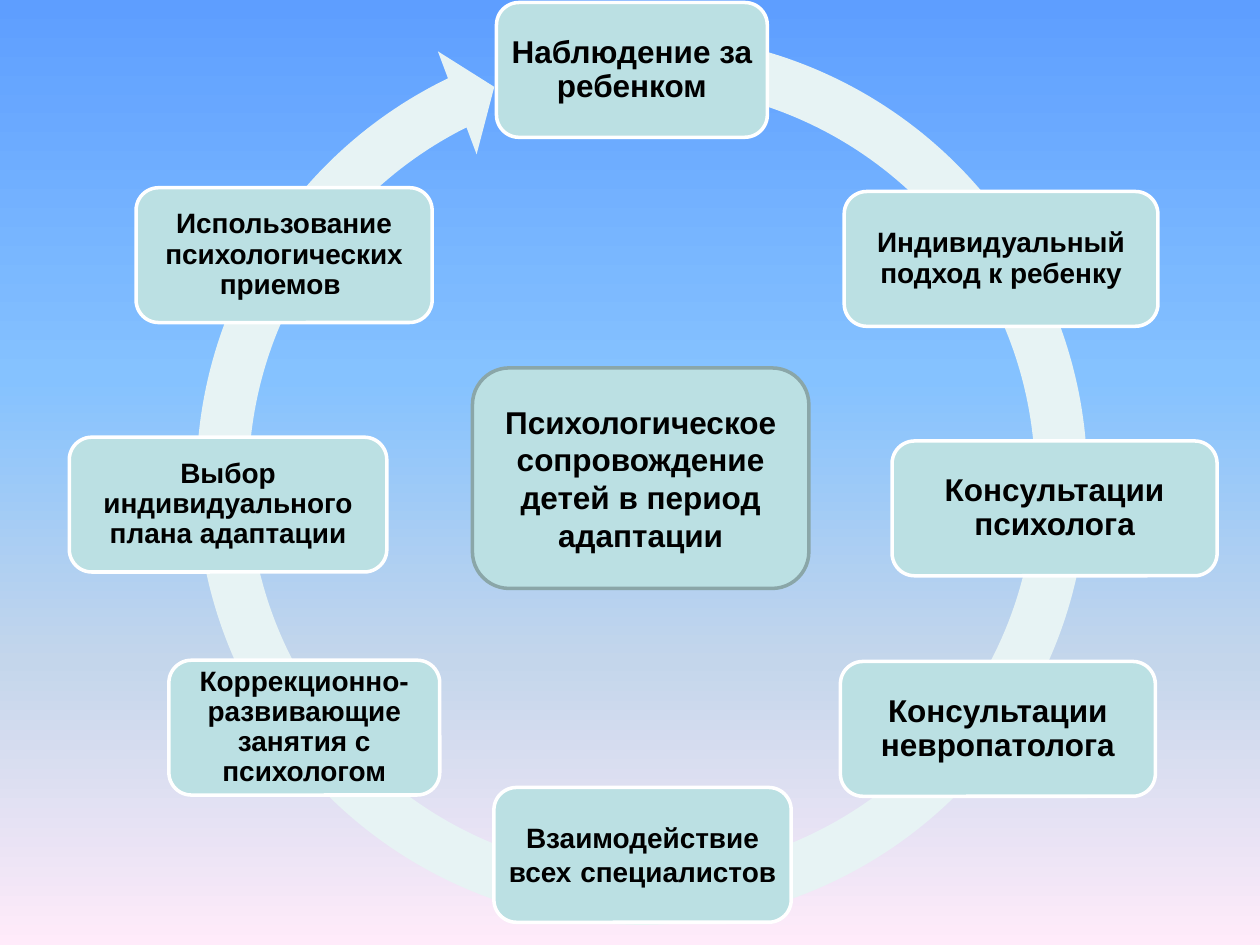
"""Build a slide with a cycle of child adaptation support steps."""
from dataclasses import dataclass

from lxml import etree
from pptx import Presentation
from pptx import util as u
from pptx.dml.color import RGBColor
from pptx.enum import shapes, text
from pptx.oxml.ns import qn
from pptx.slide import Slide


@dataclass(frozen=True)
class Theme:
    """Colours, type sizes and line width of the slide."""

    font: str = "Arial"
    ink: str = "000000"
    box: str = "BBE0E3"
    box_line: str = "FFFFFF"
    center_line: str = "8AA6A8"
    arrow: str = "E7F3F4"
    large: int = 18
    small: int = 16
    line_width: int = 2
    background: tuple = ((0, "5E9EFF"), (40, "85C2FF"), (70, "C4D6EB"), (100, "FFEBFA"))


THEME = Theme()


@dataclass(frozen=True)
class Box:
    """A rounded box whose text is a list of (words, size) runs."""

    left: float
    top: float
    width: float
    runs: list[tuple[str, int]]
    height: float = 1.07
    line: str = THEME.box_line
    inset: float = 0.02
    spacing: float = 0.9


STEPS = [
    Box(3.94, 0.02, 2.15, [("Наблюдение за ребенком", THEME.large)]),
    Box(6.7, 1.52, 2.49, [("Индивидуальный подход к ребенку", THEME.small)]),
    Box(7.08, 3.5, 2.58, [("Консультации психолога", THEME.large)]),
    Box(6.67, 5.25, 2.5, [("Консультации невропатолога", THEME.large)]),
    Box(3.92, 6.25, 2.36, [
        ("Взаимодействие", THEME.small), (" ", THEME.large),
        ("всех", THEME.small), (" ", THEME.large), ("специалистов", THEME.small),
    ]),
    Box(1.34, 5.24, 2.15, [("Коррекционно-развивающие занятия с психологом", THEME.small)]),
    Box(0.55, 3.47, 2.52, [("Выбор индивидуального плана адаптации", THEME.small)]),
    Box(1.08, 1.49, 2.35, [("Использование психологических приемов ", THEME.small)]),
]
CENTER = Box(
    3.75, 2.92, 2.67, [("Психологическое сопровождение детей в период адаптации", THEME.large)],
    height=1.75, line=THEME.center_line, inset=0.1, spacing=1.0,
)


def paint_background(slide: Slide) -> None:
    """Fill the slide with the vertical theme gradient."""
    fill = slide.background.fill
    fill.gradient()
    fill.gradient_angle = 270
    stops = slide.element.find(".//" + qn("a:gsLst"))
    stops.clear()
    for percent, color in THEME.background:
        stop = etree.SubElement(stops, qn("a:gs"), pos=str(percent * 1000))
        etree.SubElement(stop, qn("a:srgbClr"), val=color)


def draw_arrow(slide: Slide) -> None:
    """Draw the circular arrow behind the steps."""
    size = u.Inches(7.53)
    shape = slide.shapes.add_shape(
        shapes.MSO_SHAPE.CIRCULAR_ARROW, u.Inches(1.33), u.Inches(0.04), size, size)
    for index, value in enumerate((0.055, 3.307, 146.328, 168.836, 0.058)):
        shape.adjustments[index] = value
    shape.shadow.inherit = False
    shape.fill.solid()
    shape.fill.fore_color.rgb = RGBColor.from_string(THEME.arrow)
    shape.line.fill.background()


def draw_box(slide: Slide, box: Box) -> None:
    """Draw one rounded box with centred bold text."""
    place = map(u.Inches, (box.left, box.top, box.width, box.height))
    shape = slide.shapes.add_shape(shapes.MSO_SHAPE.ROUNDED_RECTANGLE, *place)
    shape.shadow.inherit = False
    shape.fill.solid()
    shape.fill.fore_color.rgb = RGBColor.from_string(THEME.box)
    shape.line.color.rgb = RGBColor.from_string(box.line)
    shape.line.width = u.Pt(THEME.line_width)
    frame = shape.text_frame
    inset = u.Inches(box.inset)
    frame_format = {
        "word_wrap": True, "vertical_anchor": text.MSO_ANCHOR.MIDDLE,
        "margin_left": inset, "margin_right": inset,
        "margin_top": inset, "margin_bottom": inset,
    }
    for name, value in frame_format.items():
        setattr(frame, name, value)
    paragraph = frame.paragraphs[0]
    paragraph.alignment = text.PP_ALIGN.CENTER
    paragraph.line_spacing = box.spacing
    for words, size in box.runs:
        run = paragraph.add_run()
        run.text = words
        for name, value in {"name": THEME.font, "size": u.Pt(size), "bold": True}.items():
            setattr(run.font, name, value)
        run.font.color.rgb = RGBColor.from_string(THEME.ink)


def main() -> None:
    """Build and save the presentation."""
    presentation = Presentation()
    presentation.slide_width = u.Inches(10)
    presentation.slide_height = u.Inches(7.5)
    slide = presentation.slides.add_slide(presentation.slide_layouts[6])
    paint_background(slide)
    draw_arrow(slide)
    for box in [*STEPS, CENTER]:
        draw_box(slide, box)
    presentation.save("out.pptx")


if __name__ == "__main__":
    main()
